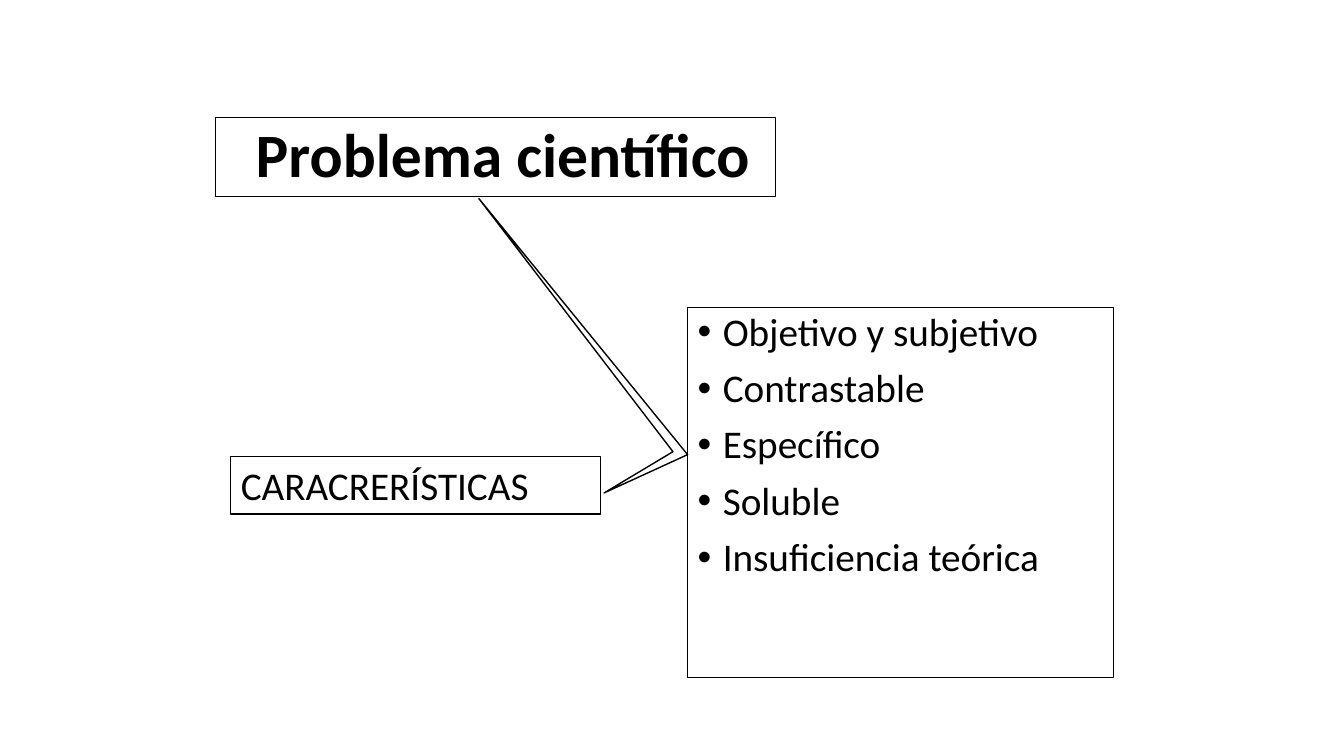
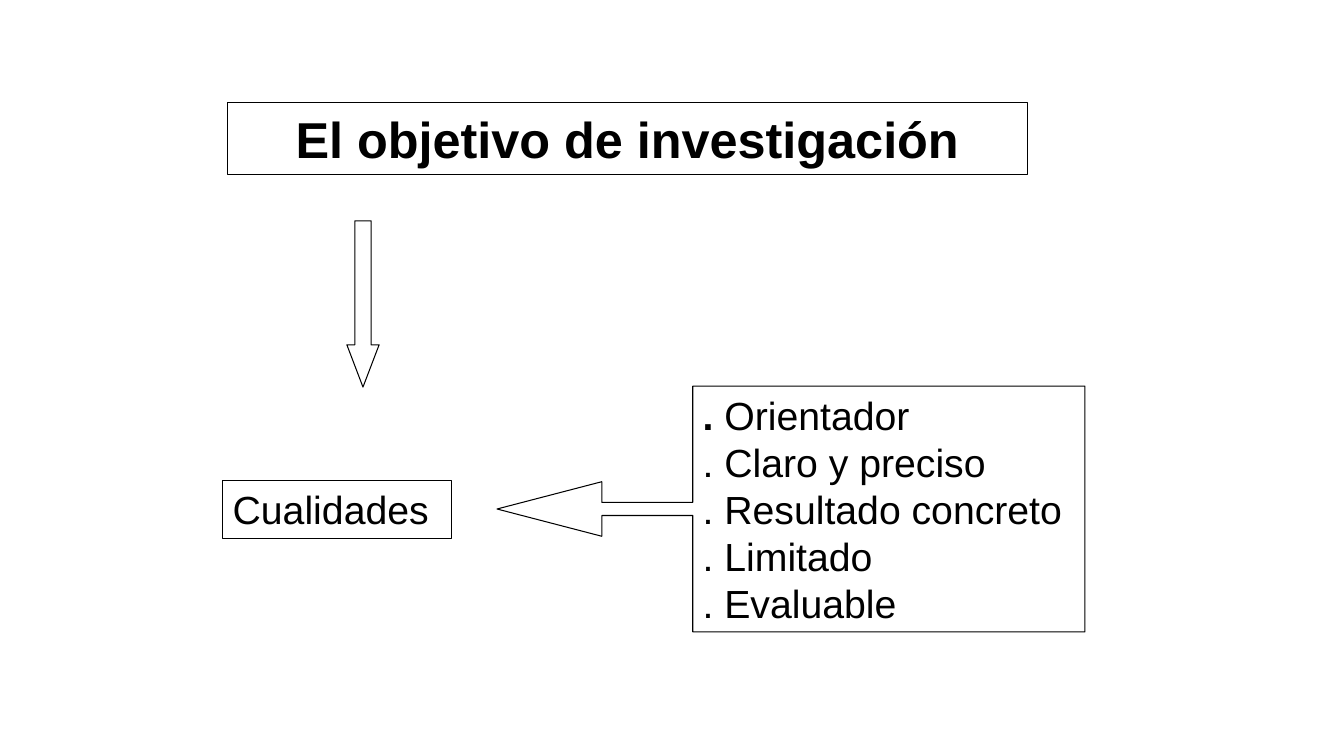
from pptx import Presentation
from pptx.dml.color import RGBColor
from pptx.enum.shapes import MSO_SHAPE
from pptx.enum.text import MSO_ANCHOR, PP_ALIGN
from pptx.oxml.ns import qn
from pptx.util import Inches, Pt
from lxml import etree

BLACK = RGBColor(0x00, 0x00, 0x00)
WHITE = RGBColor(0xFF, 0xFF, 0xFF)
RECTANGLE = MSO_SHAPE.RECTANGLE
DOWN_ARROW = MSO_SHAPE.DOWN_ARROW
LEFT_ARROW_CALLOUT = MSO_SHAPE.LEFT_ARROW_CALLOUT
TOP, MIDDLE = MSO_ANCHOR.TOP, MSO_ANCHOR.MIDDLE
LEFT, CENTER, RIGHT = PP_ALIGN.LEFT, PP_ALIGN.CENTER, PP_ALIGN.RIGHT
JUSTIFY = PP_ALIGN.JUSTIFY

CALIBRI_TITLE = {"name": "Calibri", "size": Pt(44), "bold": True}
CALIBRI_BODY = {"name": "Calibri", "size": Pt(28), "bold": False}
ARIAL_TITLE = {"name": "Arial", "size": Pt(36), "bold": True}
ARIAL_BODY = {"name": "Arial", "size": Pt(28), "bold": False}

FEATURES = ["Objetivo y subjetivo", "Contrastable", "Específico", "Soluble",
            "Insuficiencia teórica"]
QUALITIES = ["Orientador", "Claro y preciso", "Resultado concreto", "Limitado",
             "Evaluable"]


def apply_format(target, values):
    """Set each attribute of the target from a dict."""
    for name, value in values.items():
        setattr(target, name, value)


def outline(shape, width=0.75):
    """Give a shape a thin black outline and no fill or shadow."""
    shape.shadow.inherit = False
    shape.fill.background()
    shape.line.color.rgb = BLACK
    shape.line.width = Pt(width)


def add_outlined(page, kind, box, adjustments=()):
    """Add an outlined preset shape in the given box."""
    shape = page.shapes.add_shape(kind, *map(Inches, box))
    outline(shape)
    for index, value in enumerate(adjustments):
        shape.adjustments[index] = value
    return shape


def add_bullet(para):
    """Give a paragraph a round bullet with a hanging indent."""
    properties = para._p.get_or_add_pPr()
    properties.set("marL", str(Inches(0.25)))
    properties.set("indent", str(-Inches(0.25)))
    etree.SubElement(properties, qn("a:buFont")).set("typeface", "Arial")
    etree.SubElement(properties, qn("a:buChar")).set("char", "•")


def write_lines(shape, lines, font, align=LEFT, anchor=TOP, bullets=False,
                line_spacing=1.0, gap=0):
    """Fill a shape with paragraphs, each a list of (text, bold) spans."""
    frame = shape.text_frame
    apply_format(frame, {"word_wrap": True, "vertical_anchor": anchor})
    for index, spans in enumerate(lines):
        para = frame.add_paragraph() if index else frame.paragraphs[0]
        if bullets:
            add_bullet(para)
        apply_format(para, {"alignment": align, "line_spacing": line_spacing,
                            "space_before": Pt(gap if index else 0)})
        for text, bold in spans:
            span = para.add_run()
            span.text = text
            apply_format(span.font, {**font, "bold": bold})
            span.font.color.rgb = BLACK


def add_label(page, box, text, font, **layout):
    """Add an outlined box with one line of text."""
    shape = add_outlined(page, RECTANGLE, box)
    write_lines(shape, [[(text, font["bold"])]], font, **layout)
    return shape


def add_bent_pointer(page, box):
    """Draw the bent pointer that ties the title and label to the list."""
    left, top, width, height = box
    corners = [(0.6, 1), (1, 0.87), (0, 0), (0.93, 0.86)]
    points = [(Inches(left + x * width), Inches(top + y * height))
              for x, y in corners]
    builder = page.shapes.build_freeform(*points[0])
    builder.add_line_segments(points[1:], close=True)
    outline(builder.convert_to_shape(), 1)


def add_feature_list(page, box):
    """Add the bulleted box of problem features."""
    shape = add_outlined(page, RECTANGLE, box)
    write_lines(shape, [[(text, False)] for text in FEATURES], CALIBRI_BODY,
                align=JUSTIFY, bullets=True, line_spacing=0.9, gap=10)


def add_quality_callout(page, box):
    """Add the left arrow callout that lists the qualities."""
    shape = add_outlined(page, LEFT_ARROW_CALLOUT, box,
                         (0.053, 0.111, 0.426, 0.667))
    lines = [[(". ", index == 0), (text, False)]
             for index, text in enumerate(QUALITIES)]
    write_lines(shape, lines, ARIAL_BODY, align=JUSTIFY, anchor=MIDDLE)


def build_problem_page(page):
    """Build the slide on the scientific problem."""
    title = add_label(page, (2.14, 1.17, 5.55, 0.78), "Problema científico",
                      CALIBRI_TITLE, align=RIGHT, anchor=MIDDLE,
                      line_spacing=0.9)
    title.text_frame.margin_right = Inches(0.25)
    add_feature_list(page, (6.82, 3.05, 4.22, 3.67))
    add_label(page, (2.29, 4.53, 3.67, 0.57), "CARACRERÍSTICAS", CALIBRI_BODY)
    add_bent_pointer(page, (4.75, 1.97, 2.07, 2.92))


def build_objective_page(page):
    """Build the slide on the research objective."""
    add_label(page, (2.26, 1.02, 7.93, 0.71), "El objetivo de investigación",
              ARIAL_TITLE, align=CENTER)
    add_label(page, (2.21, 4.77, 2.27, 0.57), "Cualidades", ARIAL_BODY)
    add_quality_callout(page, (4.93, 3.83, 5.83, 2.44))
    add_outlined(page, DOWN_ARROW, (3.44, 2.19, 0.32, 1.65), (0.5, 1.31))


def main():
    """Build and save the deck."""
    deck = Presentation()
    deck.slide_width, deck.slide_height = Inches(13.33), Inches(7.5)
    for build in (build_problem_page, build_objective_page):
        page = deck.slides.add_slide(deck.slide_layouts[6])
        page.background.fill.solid()
        page.background.fill.fore_color.rgb = WHITE
        build(page)
    deck.save("out.pptx")


if __name__ == "__main__":
    main()
